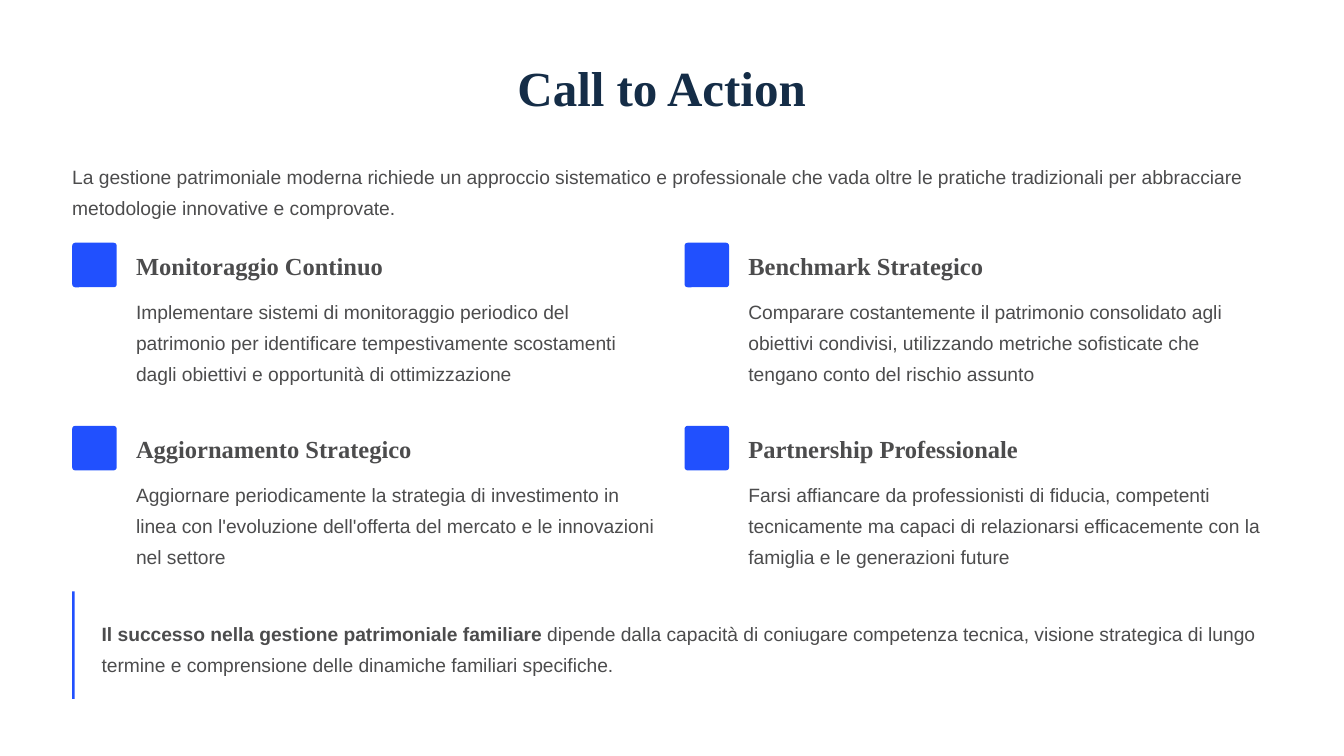
from dataclasses import dataclass

from pptx import Presentation
from pptx.dml.color import RGBColor
from pptx.enum.shapes import MSO_SHAPE
from pptx.util import Inches, Pt

RECT = MSO_SHAPE.RECTANGLE
ROUND = MSO_SHAPE.ROUNDED_RECTANGLE


@dataclass(frozen=True)
class Theme:
    paper: str = "FFFFFF"
    navy: str = "152D47"
    gray: str = "4C4C4D"
    blue: str = "2150FE"
    serif: str = "Times New Roman"
    sans: str = "Arial"
    title: float = 42
    head: float = 21
    body: float = 16.5
    title_line: float = 52.5
    head_line: float = 26
    body_line: float = 26.5


@dataclass(frozen=True)
class Action:
    head: str
    body: str


THEME = Theme()
LEFT = 0.86
TOP = 2.89
COL_STEP = 7.29
ROW_STEP = 2.18
INDENT = 0.76

INTRO = (
    "La gestione patrimoniale moderna richiede un approccio sistematico e "
    "professionale che vada oltre le pratiche tradizionali per abbracciare "
    "metodologie innovative e comprovate."
)
ACTIONS = [
    Action("Monitoraggio Continuo",
           "Implementare sistemi di monitoraggio periodico del patrimonio per "
           "identificare tempestivamente scostamenti dagli obiettivi e "
           "opportunità di ottimizzazione"),
    Action("Benchmark Strategico",
           "Comparare costantemente il patrimonio consolidato agli obiettivi "
           "condivisi, utilizzando metriche sofisticate che tengano conto del "
           "rischio assunto"),
    Action("Aggiornamento Strategico",
           "Aggiornare periodicamente la strategia di investimento in linea con "
           "l'evoluzione dell'offerta del mercato e le innovazioni nel settore"),
    Action("Partnership Professionale",
           "Farsi affiancare da professionisti di fiducia, competenti "
           "tecnicamente ma capaci di relazionarsi efficacemente con la "
           "famiglia e le generazioni future"),
]
CLOSE_LEAD = "Il successo nella gestione patrimoniale familiare"
CLOSE_REST = (
    " dipende dalla capacità di coniugare competenza tecnica, visione "
    "strategica di lungo termine e comprensione delle dinamiche familiari "
    "specifiche."
)


def add_text(slide, text: str, x: float, y: float, w: float, h: float, *,
             lead: str = "", font: str = THEME.sans, size: float = THEME.body,
             color: str = THEME.gray, line: float = THEME.body_line,
             bold: bool = False) -> None:
    """Place one paragraph, with an optional bold lead before the text."""
    box = slide.shapes.add_textbox(Inches(x), Inches(y), Inches(w), Inches(h))
    frame = box.text_frame
    frame.word_wrap = True
    frame.margin_left = frame.margin_right = 0
    frame.margin_top = frame.margin_bottom = 0
    para = frame.paragraphs[0]
    para.line_spacing = Pt(line)
    for part, heavy in ((lead, True), (text, bold)):
        if part:
            run = para.add_run()
            run.text = part
            run.font.name = font
            run.font.size = Pt(size)
            run.font.bold = heavy
            run.font.color.rgb = RGBColor.from_string(color)


def add_block(slide, kind, x: float, y: float, w: float, h: float):
    """Place a plain blue shape."""
    shape = slide.shapes.add_shape(
        kind, Inches(x), Inches(y), Inches(w), Inches(h))
    shape.shadow.inherit = False
    shape.fill.solid()
    shape.fill.fore_color.rgb = RGBColor.from_string(THEME.blue)
    shape.line.fill.background()
    return shape


def add_action(slide, action: Action, x: float, y: float) -> None:
    """Place a marker with its heading and text."""
    mark = add_block(slide, ROUND, x, y, 0.53, 0.53)
    mark.adjustments[0] = 0.067
    # The heading box is wider than its text, so it stays on one line
    add_text(slide, action.head, x + INDENT, y + 0.09, 3.6, 0.37,
             font=THEME.serif, size=THEME.head, line=THEME.head_line,
             bold=True)
    add_text(slide, action.body, x + INDENT, y + 0.59, 6.23, 1.12)


def main() -> None:
    deck = Presentation()
    deck.slide_width, deck.slide_height = Inches(16), Inches(9)
    slide = deck.slides.add_slide(deck.slide_layouts[6])
    fill = slide.background.fill
    fill.solid()
    fill.fore_color.rgb = RGBColor.from_string(THEME.paper)

    # Title and introduction
    add_text(slide, "Call to Action", 6.16, 0.66, 5.85, 0.73,
             font=THEME.serif, size=THEME.title, color=THEME.navy,
             line=THEME.title_line, bold=True)
    add_text(slide, INTRO, LEFT, 1.88, 14.28, 0.75)

    # Two by two grid of actions
    for i, action in enumerate(ACTIONS):
        row, col = divmod(i, 2)
        add_action(slide, action, LEFT + col * COL_STEP, TOP + row * ROW_STEP)

    # Closing statement with side bar
    add_text(slide, CLOSE_REST, 1.21, 7.31, 13.92, 0.75, lead=CLOSE_LEAD)
    add_block(slide, RECT, LEFT, 7.04, 0.03, 1.28)

    deck.save("out.pptx")


if __name__ == "__main__":
    main()
